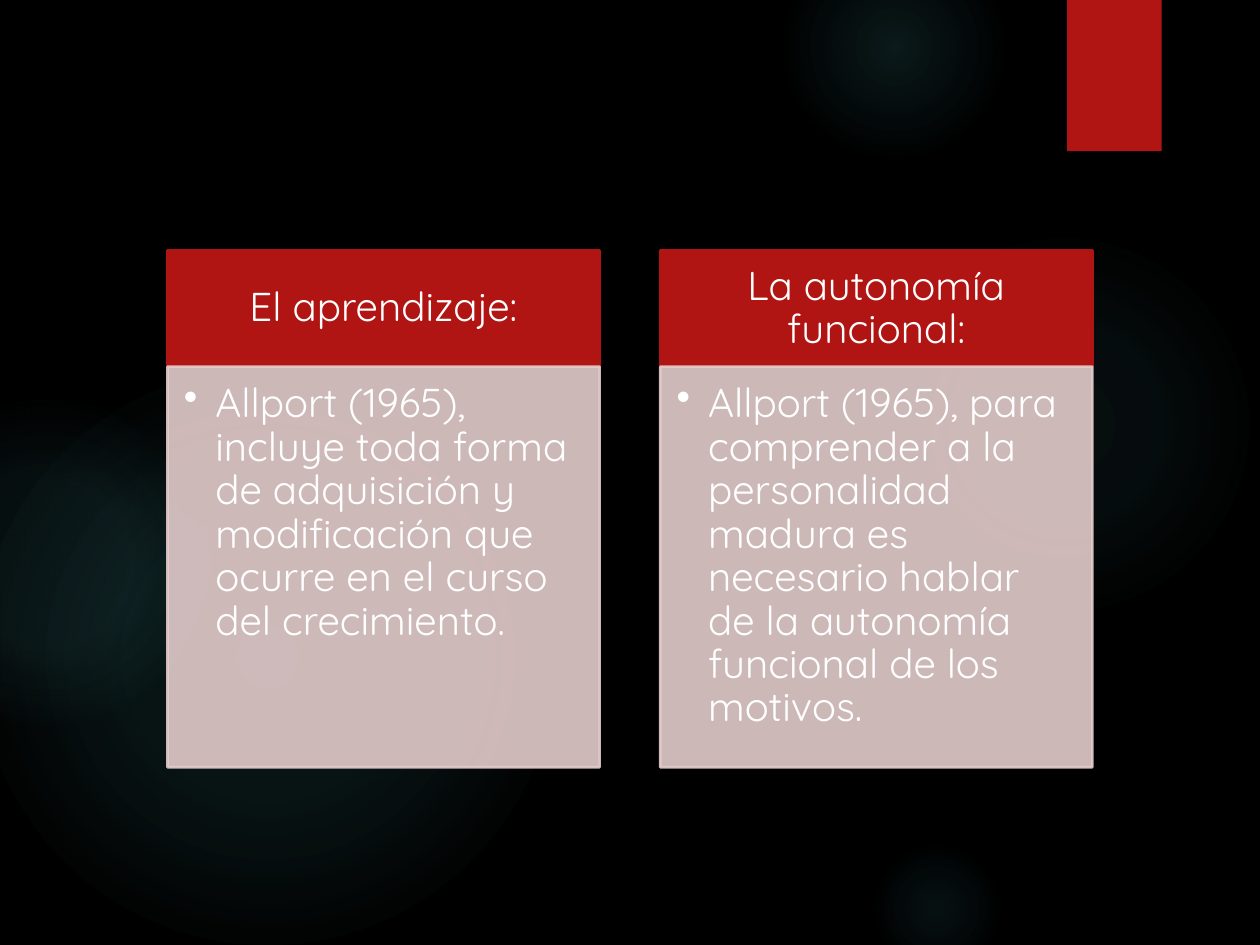
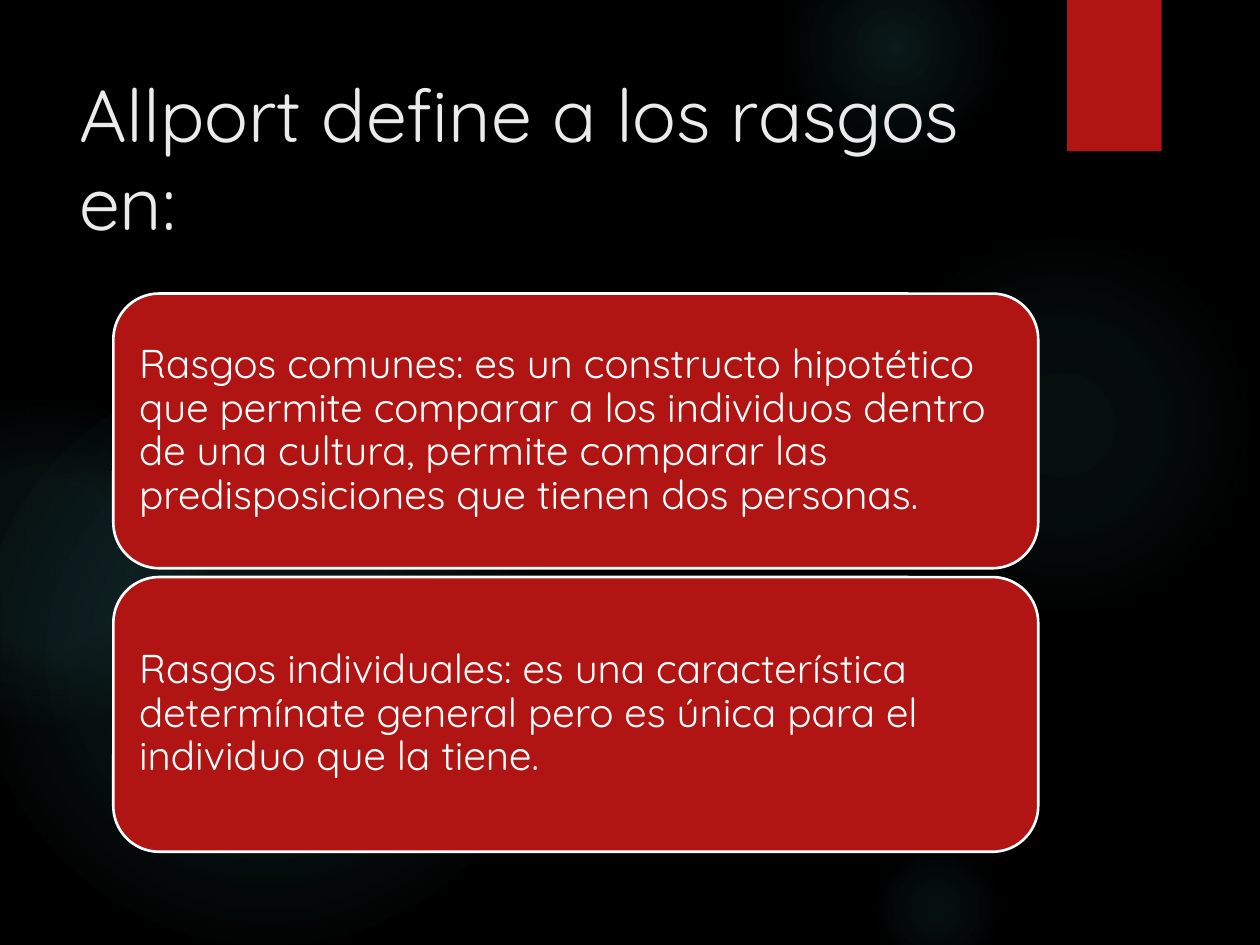
from pptx import Presentation
from pptx.dml.color import RGBColor
from pptx.enum.shapes import MSO_SHAPE
from pptx.enum.text import MSO_ANCHOR, PP_ALIGN
from pptx.oxml import parse_xml
from pptx.oxml.ns import nsdecls, qn
from pptx.util import Inches, Pt

RECT, ROUNDED, ELLIPSE = MSO_SHAPE.RECTANGLE, MSO_SHAPE.ROUNDED_RECTANGLE, MSO_SHAPE.OVAL
TOP, MIDDLE = MSO_ANCHOR.TOP, MSO_ANCHOR.MIDDLE
LEFT, CENTER = PP_ALIGN.LEFT, PP_ALIGN.CENTER

CONCEPTS = [
    ("El aprendizaje:",
     "Allport (1965), incluye toda forma de adquisición y modificación que ocurre "
     "en el curso del crecimiento."),
    ("La autonomía funcional:",
     "Allport (1965), para comprender a la personalidad madura es necesario hablar "
     "de la autonomía funcional de los motivos."),
]
TRAITS_TITLE = "Allport define a los rasgos en:"
TRAITS = [
    "Rasgos comunes: es un constructo hipotético que permite comparar a los individuos "
    "dentro de una cultura, permite comparar las predisposiciones que tienen dos personas.",
    "Rasgos individuales: es una característica determínate general pero es única para "
    "el individuo que la tiene.",
]

FONT = "Quicksand"
BLACK, WHITE, TITLE_GREY = "000000", "FFFFFF", "EBEBEB"
RED, PINK, TEAL = "B01513", "E4CCCC", "50B9C1"
WIDTH, HEIGHT = 10, 7.5
TITLE_SIZE, BODY_SIZE, LINE_WIDTH = 42, 23, 1.5

# left, top, diameter, (position %, opacity %) of each gradient stop
GLOWS = [
    (6.89, 1.83, 3.08, [(0, 7), (36, 6), (69, 0)]),
    (6.22, -0.5, 1.75, [(0, 14), (36, 7), (73, 0)]),
    (6.89, 6.67, 1.08, [(0, 9), (36, 5), (66, 0)]),
    (-0.17, 2.92, 4.58, [(0, 11), (36, 10), (75, 0)]),
    (-0.92, 3.17, 2.58, [(0, 8), (36, 8), (72, 0)]),
]
TAB = (8.47, 0, 0.75, 1.2)
TITLE_BOX = (0.53, 0.5, 7.72, 1.53)

COLUMN_LEFT, COLUMN_TOP, COLUMN_WIDTH, COLUMN_STEP = 1.33, 1.99, 3.43, 3.91
HEADER_HEIGHT, DETAIL_HEIGHT = 0.92, 3.18
CARD_LEFT, CARD_TOP, CARD_WIDTH, CARD_HEIGHT, CARD_STEP = 0.9, 2.33, 7.34, 2.18, 2.25


def paint(fill, color, opacity=100):
    fill.solid()
    fill.fore_color.rgb = RGBColor.from_string(color)
    if opacity < 100:
        alpha = parse_xml(f'<a:alpha {nsdecls("a")} val="{opacity * 1000}"/>')
        fill._xPr.find(".//" + qn("a:srgbClr")).append(alpha)


def add_panel(page, kind, area, color=None, line=None, opacity=100):
    panel = page.shapes.add_shape(kind, *map(Inches, area))
    panel.shadow.inherit = False
    if color:
        paint(panel.fill, color, opacity)
    else:
        panel.fill.background()
    if line:
        paint(panel.line.fill, line, opacity)
        panel.line.width = Pt(LINE_WIDTH)
    else:
        panel.line.fill.background()
    return panel


def add_glow(page, left, top, diameter, stops):
    """Draw a round light that fades out from its centre."""
    glow = add_panel(page, ELLIPSE, (left, top, diameter, diameter))
    stop_list = "".join(
        f'<a:gs pos="{position * 1000}"><a:srgbClr val="{TEAL}">'
        f'<a:alpha val="{opacity * 1000}"/></a:srgbClr></a:gs>'
        for position, opacity in stops)
    gradient = parse_xml(
        f'<a:gradFill {nsdecls("a")}><a:gsLst>{stop_list}</a:gsLst><a:path path="circle">'
        '<a:fillToRect l="50000" t="50000" r="50000" b="50000"/></a:path></a:gradFill>')
    properties = glow.element.spPr
    properties.replace(properties.find(qn("a:noFill")), gradient)


def write(box, text, size=BODY_SIZE, color=WHITE, anchor=MIDDLE, align=LEFT,
          insets=(0.1, 0.1, 0.1, 0.1), spacing=0.9, bullet=False):
    """Fill a box with one paragraph; insets run left, top, right, bottom."""
    frame = box.text_frame
    frame.word_wrap = True
    frame.vertical_anchor = anchor
    (frame.margin_left, frame.margin_top,
     frame.margin_right, frame.margin_bottom) = map(Inches, insets)
    para = frame.paragraphs[0]
    para.alignment = align
    para.line_spacing = spacing
    if bullet:
        properties = para._p.get_or_add_pPr()
        properties.set("marL", str(Inches(0.25)))
        properties.set("indent", str(Inches(-0.25)))
        properties.append(parse_xml(f'<a:buChar {nsdecls("a")} char="•"/>'))
    span = para.add_run()
    span.text = text
    span.font.name = FONT
    span.font.size = Pt(size)
    span.font.color.rgb = RGBColor.from_string(color)


def add_page(deck):
    """Add a blank page with the shared glows and red tab."""
    page = deck.slides.add_slide(deck.slide_layouts[6])
    paint(page.background.fill, BLACK)
    for glow in GLOWS:
        add_glow(page, *glow)
    add_panel(page, RECT, TAB, RED)
    return page


def build_concepts(deck):
    page = add_page(deck)
    for column, (heading, detail) in enumerate(CONCEPTS):
        left = COLUMN_LEFT + column * COLUMN_STEP
        header = add_panel(page, RECT, (left, COLUMN_TOP, COLUMN_WIDTH, HEADER_HEIGHT),
                           RED, RED)
        write(header, heading, align=CENTER, insets=(0.18, 0.1, 0.18, 0.1))
        body = add_panel(page, RECT,
                         (left, COLUMN_TOP + HEADER_HEIGHT, COLUMN_WIDTH, DETAIL_HEIGHT),
                         PINK, PINK, opacity=90)
        write(body, detail, anchor=TOP, insets=(0.13, 0.13, 0.18, 0.2), bullet=True)


def build_traits(deck):
    page = add_page(deck)
    title = page.shapes.add_textbox(*map(Inches, TITLE_BOX))
    write(title, TRAITS_TITLE, TITLE_SIZE, TITLE_GREY, TOP,
          insets=(0.1, 0.05, 0.1, 0.05), spacing=1.0)
    for row, trait in enumerate(TRAITS):
        card = add_panel(page, ROUNDED,
                         (CARD_LEFT, CARD_TOP + row * CARD_STEP, CARD_WIDTH, CARD_HEIGHT),
                         RED, WHITE)
        write(card, trait)


def main():
    deck = Presentation()
    deck.slide_width, deck.slide_height = Inches(WIDTH), Inches(HEIGHT)
    build_concepts(deck)
    build_traits(deck)
    deck.save("out.pptx")


if __name__ == "__main__":
    main()
